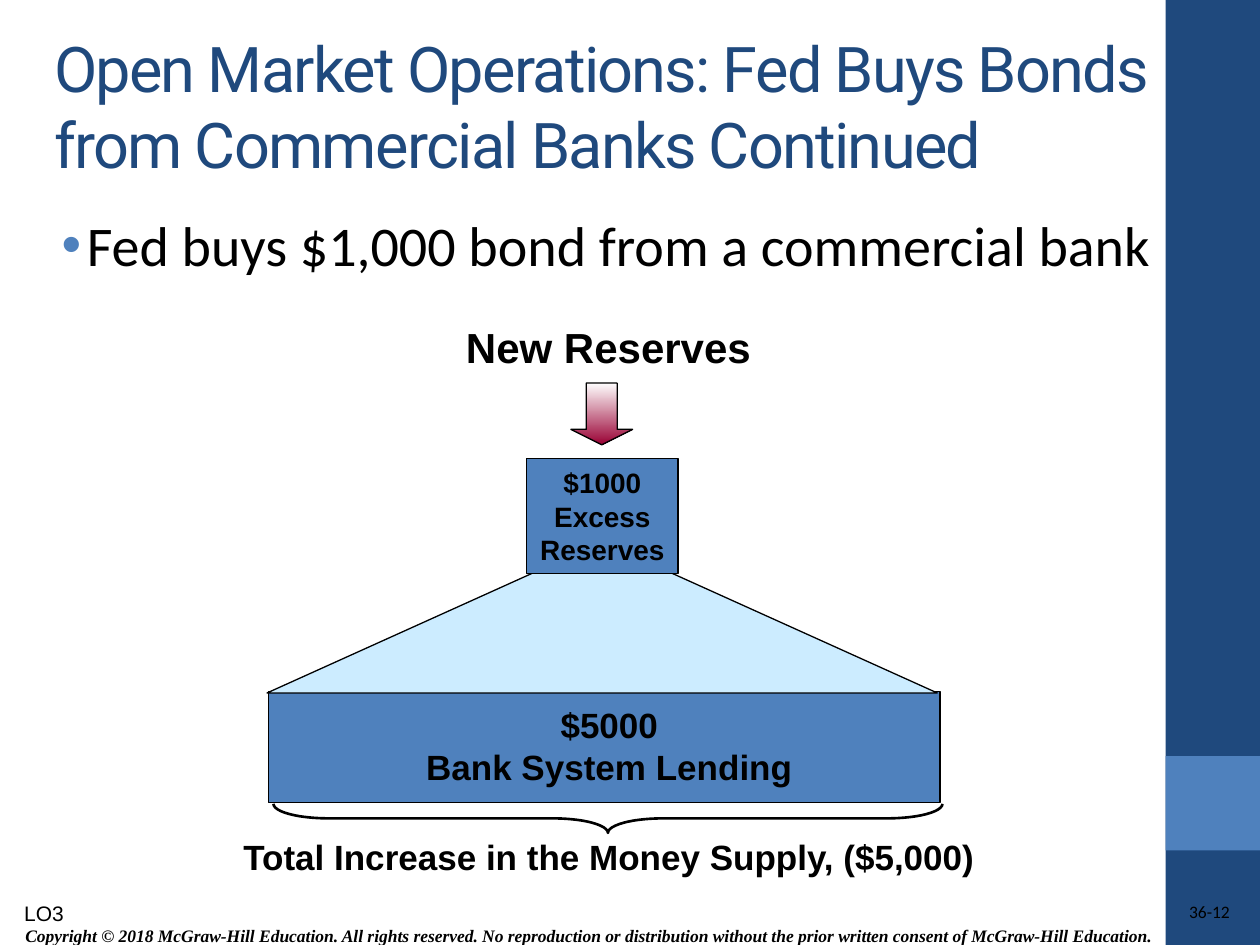
from dataclasses import dataclass

from lxml.etree import SubElement
from pptx import Presentation
from pptx.dml.color import RGBColor
from pptx.enum.shapes import MSO_SHAPE as Shape
from pptx.enum.text import MSO_ANCHOR as Anchor, PP_ALIGN as Align
from pptx.oxml.ns import qn
from pptx.util import Pt


@dataclass(frozen=True)
class Theme:
    navy: str = "1F497D"
    blue: str = "4F81BD"
    pale: str = "CCECFF"
    crimson: str = "990033"
    white: str = "FFFFFF"
    black: str = "000000"
    title: int = 36
    body: int = 32
    heading: int = 24
    label: int = 20
    small: int = 16
    tag: int = 12
    footer: int = 10


class SlideBuilder:
    def __init__(self, slide, theme):
        self.slide = slide
        self.theme = theme

    def shape(self, kind, place, fill=None, line=None, adjustments=()):
        shape = self.slide.shapes.add_shape(kind, *map(Pt, place))
        shape.shadow.inherit = False
        for index, value in enumerate(adjustments):
            shape.adjustments[index] = value
        if fill:
            shape.fill.solid()
            shape.fill.fore_color.rgb = RGBColor.from_string(fill)
        else:
            shape.fill.background()
        if line:
            shape.line.color.rgb = RGBColor.from_string(self.theme.black)
            shape.line.width = Pt(line)
        else:
            shape.line.fill.background()
        return shape

    def gradient(self, shape, colors):
        shape.fill.gradient()
        shape.fill.gradient_angle = 270
        for position, (stop, color) in enumerate(zip(shape.fill.gradient_stops, colors)):
            stop.position = position
            stop.color.rgb = RGBColor.from_string(color)

    def label(self, shape, text, size, font="Arial", color=None, bold=False,
              italic=False, align=Align.CENTER, anchor=Anchor.TOP, wrap=False):
        frame = shape.text_frame
        frame.word_wrap = wrap
        frame.vertical_anchor = anchor
        frame.text = text
        for para in frame.paragraphs:
            para.alignment = align
            for span in para.runs:
                span.font.name = font
                span.font.size = Pt(size)
                span.font.bold = bold
                span.font.italic = italic
                span.font.color.rgb = RGBColor.from_string(color or self.theme.black)
        return frame

    def text(self, place, text, size, **style):
        box = self.slide.shapes.add_textbox(*map(Pt, place))
        return self.label(box, text, size, **style)

    def bullet(self, para, indent):
        properties = para._p.get_or_add_pPr()
        properties.set("marL", str(Pt(indent)))
        properties.set("indent", str(-Pt(indent)))
        color = SubElement(properties, qn("a:buClr"))
        SubElement(color, qn("a:srgbClr"), val=self.theme.blue)
        SubElement(properties, qn("a:buFont"), typeface="Arial")
        SubElement(properties, qn("a:buChar"), char="•")

    def tighten(self, para, points):
        for span in para.runs:
            span._r.get_or_add_rPr().set("spc", str(points * 100))


def main():
    theme = Theme()
    deck = Presentation()
    deck.slide_width, deck.slide_height = Pt(720), Pt(540)
    page = SlideBuilder(deck.slides.add_slide(deck.slide_layouts[6]), theme)

    page.shape(Shape.RECTANGLE, (666, 0, 54, 540), theme.navy)
    page.shape(Shape.RECTANGLE, (666, 432, 54, 54), theme.blue)
    page.text((4.3, 524.2, 663.8, 20.2),
              "Copyright © 2018 McGraw-Hill Education. All rights reserved. "
              "No reproduction or distribution without the prior written consent "
              "of McGraw-Hill Education.",
              theme.footer, font="Times New Roman", bold=True, italic=True,
              anchor=Anchor.MIDDLE, wrap=True)
    number = page.text((562.3, 514.8, 140.4, 14.4), "36-12", theme.footer,
                       font="Calibri", align=Align.RIGHT, wrap=True)
    number.margin_left = number.margin_right = 0
    number.margin_top = number.margin_bottom = 0

    title = page.text((23.8, 15.1, 656.6, 90),
                      "Open Market Operations: Fed Buys Bonds from Commercial Banks Continued",
                      theme.title, font="Roboto", color=theme.navy, align=Align.LEFT,
                      anchor=Anchor.MIDDLE, wrap=True)
    page.tighten(title.paragraphs[0], -1)
    body = page.text((28.1, 116.6, 647.3, 46.1),
                     "Fed buys $1,000 bond from a commercial bank",
                     theme.body, font="Calibri", align=Align.LEFT, wrap=True)
    page.bullet(body.paragraphs[0], 14.4)

    page.shape(Shape.RECTANGLE, (153.4, 395.3, 383.8, 63.4), theme.blue, 0.75)
    page.shape(Shape.ISOSCELES_TRIANGLE, (152.6, 309.6, 383, 86.4), theme.pale, 0.75)
    page.text((259.2, 180, 177.8, 36), "New Reserves", theme.heading,
              bold=True, align=Align.LEFT)
    page.text((236.2, 398.2, 223.9, 55.4), "$5000\nBank System Lending",
              theme.label, bold=True)
    page.text((131, 473.8, 434.2, 31), "Total Increase in the Money Supply, ($5,000)",
              theme.label, bold=True)
    brace = page.shape(Shape.LEFT_BRACE, (339.1, 276.5, 16.6, 382.3), line=1.5,
                       adjustments=(1.9, 0.5))
    brace.rotation = 270
    excess = page.shape(Shape.RECTANGLE, (301, 262.1, 86.4, 65.5), theme.blue, 0.75)
    page.label(excess, "$1000\nExcess\nReserves", theme.small, bold=True,
               anchor=Anchor.MIDDLE)
    arrow = page.shape(Shape.DOWN_ARROW, (326.2, 218.9, 35.3, 35.3), line=0.75,
                       adjustments=(0.5, 0.25))
    page.gradient(arrow, (theme.white, theme.crimson))

    page.text((0, 511.2, 50.4, 21.6), "LO3", theme.tag, wrap=True)
    deck.save("out.pptx")


if __name__ == "__main__":
    main()
